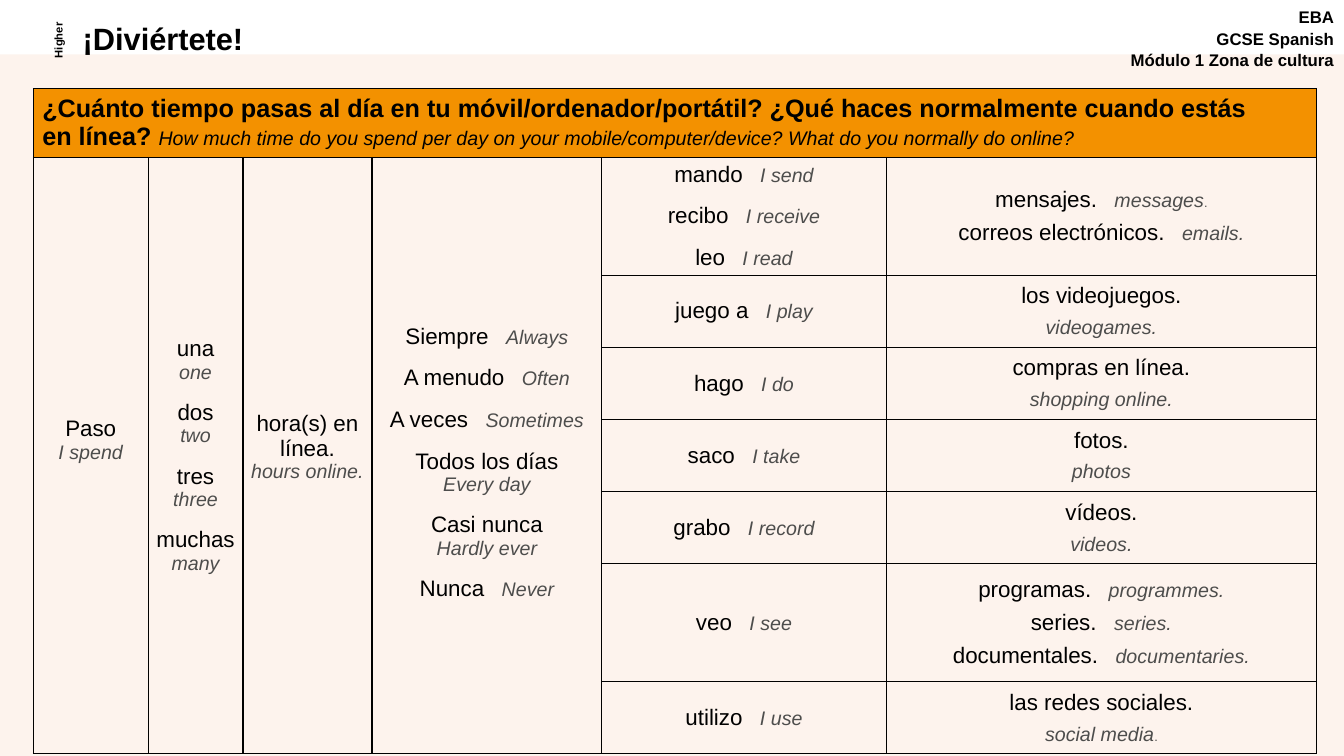
from dataclasses import dataclass

from lxml import etree
from pptx import Presentation
from pptx.dml.color import RGBColor
from pptx.enum import shapes, text
from pptx.oxml.ns import qn
from pptx.util import Inches, Pt


@dataclass(frozen=True)
class Theme:
    font: str = "Arial"
    ink: str = "000000"
    grey: str = "4D4D4C"
    cream: str = "FDF3ED"
    orange: str = "F39100"
    title: int = 22
    question: int = 18
    spanish: int = 16
    english: int = 14
    course: int = 12
    stop: int = 9
    tier: int = 8


@dataclass(frozen=True)
class Phrase:
    """Spanish words with their English meaning beside or below them."""
    spanish: str
    english: str
    stacked: bool = False
    small_stop: bool = False


theme = Theme()


def add_span(para, words, size, color=theme.ink, bold=False, italic=False, tracking=0):
    span = para.add_run()
    span.text = words
    span.font.name = theme.font
    span.font.size = Pt(size)
    span.font.bold = bold
    span.font.italic = italic
    span.font.color.rgb = RGBColor.from_string(color)
    if tracking:
        span._r.get_or_add_rPr().set("spc", str(tracking * 100))


def fill_cell(cell, phrases, after, inner):
    """Write phrases with points after each one and inside each stacked one."""
    paras = []

    def_para = cell.text_frame.paragraphs[0]
    for phrase in phrases:
        para = cell.text_frame.add_paragraph() if paras else def_para
        paras.append(para)
        add_span(para, phrase.spanish, theme.spanish)
        if phrase.stacked:
            para.space_after = Pt(inner)
            para = cell.text_frame.add_paragraph()
            paras.append(para)
        else:
            add_span(para, " ", theme.spanish, tracking=8)
        add_span(para, phrase.english, theme.english, theme.grey, italic=True)
        if phrase.small_stop:
            add_span(para, ".", theme.stop, theme.grey)
        para.space_after = Pt(after)
    for para in paras:
        para.alignment = text.PP_ALIGN.CENTER
    paras[-1].space_after = Pt(0)


deck = Presentation()
deck.slide_width, deck.slide_height = Inches(13.33), Inches(7.5)
page = deck.slides.add_slide(deck.slide_layouts[5])

# Background panel, behind the title
panel = page.shapes.add_shape(shapes.MSO_SHAPE.RECTANGLE, 0, Inches(0.54), Inches(13.33), Inches(6.96))
panel.shadow.inherit = False
panel.fill.solid()
panel.fill.fore_color.rgb = RGBColor.from_string(theme.cream)
panel.line.fill.background()
page.shapes._spTree.insert(2, panel._element)

# Heading
title = page.shapes.title
title.left, title.top, title.width, title.height = (Inches(n) for n in (0.72, 0.19, 6.88, 0.43))
title.text_frame.vertical_anchor = text.MSO_ANCHOR.MIDDLE
para = title.text_frame.paragraphs[0]
para.alignment = text.PP_ALIGN.LEFT
para.line_spacing = 0.9
add_span(para, "¡Diviértete!", theme.title, bold=True)

course_box = page.shapes.add_textbox(Inches(10.44), Inches(0.02), Inches(2.89), Inches(0.77))
course_box.text_frame.word_wrap = True
for index, words in enumerate(("EBA", "GCSE Spanish", "Módulo 1 Zona de cultura")):
    para = course_box.text_frame.add_paragraph() if index else course_box.text_frame.paragraphs[0]
    para.alignment = text.PP_ALIGN.RIGHT
    para.space_before = Pt(1 if index else 0)
    add_span(para, words, theme.course, bold=True)

tier_box = page.shapes.add_textbox(Inches(0.18), Inches(0.29), Inches(0.78), Inches(0.22))
tier_box.rotation = 270
tier_box.text_frame.word_wrap = True
para = tier_box.text_frame.paragraphs[0]
para.alignment = text.PP_ALIGN.CENTER
add_span(para, "Higher", theme.tier, bold=True)

# Sentence-builder table
widths = (1.14, 0.94, 1.28, 2.28, 2.82, 4.27)
header, tall, table_height = 0.68, 1.17, 6.6
short = (table_height - header - 2 * tall) / 5
heights = (header, tall, short, short, short, short, tall, short)
table = page.shapes.add_table(len(heights), len(widths), Inches(0.33), Inches(0.88),
                              Inches(sum(widths)), Inches(table_height)).table
table.first_row = table.horz_banding = False
for column, width in zip(table.columns, widths):
    column.width = Inches(width)
for row, height in zip(table.rows, heights):
    row.height = Inches(height)

last_row = len(heights) - 1
for r in range(len(heights)):
    for c in range(len(widths)):
        cell = table.cell(r, c)
        cell.vertical_anchor = text.MSO_ANCHOR.MIDDLE
        cell.margin_left = cell.margin_right = Inches(0.06 if r else 0.09)
        cell.margin_top = cell.margin_bottom = Inches(0 if r else 0.04)
        heavy_sides = {
            "lnL": r > 0 and 2 <= c <= 4,
            "lnR": r > 0 and 1 <= c <= 3,
            "lnT": r > 1 and c >= 4,
            "lnB": 0 < r < last_row and c >= 4,
        }
        for side, heavy in heavy_sides.items():
            border = etree.SubElement(cell._tc.get_or_add_tcPr(), qn(f"a:{side}"),
                                      w=str(Pt(1 if heavy else 0.75)))
            fill = etree.SubElement(border, qn("a:solidFill"))
            etree.SubElement(fill, qn("a:srgbClr"), val=theme.ink)
        if r:
            cell.fill.background()
        else:
            cell.fill.solid()
            cell.fill.fore_color.rgb = RGBColor.from_string(theme.orange)

question = table.cell(0, 0)
question.merge(table.cell(0, len(widths) - 1))
para = question.text_frame.paragraphs[0]
add_span(para, "¿Cuánto tiempo pasas al día en tu móvil/ordenador/portátil? ¿Qué haces normalmente cuando estás",
         theme.question, bold=True)
para.add_line_break()
add_span(para, "en línea? ", theme.question, bold=True)
add_span(para, "How much time do you spend per day on your mobile/computer/device? What do you normally do online?",
         theme.english, italic=True)

# Tall columns: phrases, top margin, bottom margin
openers = (
    ([Phrase("Paso", "I spend", True)], 0, 0.31),
    ([Phrase("una", "one", True), Phrase("dos", "two", True),
      Phrase("tres", "three", True), Phrase("muchas", "many", True)], 0, 0),
    ([Phrase("hora(s) en línea.", "hours online.", True)], 0, 0.17),
    ([Phrase("Siempre", "Always"), Phrase("A menudo", "Often"), Phrase("A veces", "Sometimes"),
      Phrase("Todos los días", "Every day", True), Phrase("Casi nunca", "Hardly ever", True),
      Phrase("Nunca", "Never")], 0.14, 0),
)
for c, (phrases, top, bottom) in enumerate(openers):
    cell = table.cell(1, c)
    cell.merge(table.cell(last_row, c))
    cell.margin_top, cell.margin_bottom = Inches(top), Inches(bottom)
    fill_cell(cell, phrases, after=12, inner=0)

# Verbs and what follows them
activities = (
    ([Phrase("mando", "I send"), Phrase("recibo", "I receive"), Phrase("leo", "I read")],
     [Phrase("mensajes.", "messages", small_stop=True), Phrase("correos electrónicos.", "emails.")]),
    ([Phrase("juego a", "I play")], [Phrase("los videojuegos.", "videogames.", True)]),
    ([Phrase("hago", "I do")], [Phrase("compras en línea.", "shopping online.", True)]),
    ([Phrase("saco", "I take")], [Phrase("fotos.", "photos", True)]),
    ([Phrase("grabo", "I record")], [Phrase("vídeos.", "videos.", True)]),
    ([Phrase("veo", "I see")],
     [Phrase("programas.", "programmes."), Phrase("series.", "series."),
      Phrase("documentales.", "documentaries.")]),
    ([Phrase("utilizo", "I use")], [Phrase("las redes sociales.", "social media", True, True)]),
)
for r, (verbs, objects) in enumerate(activities, start=1):
    fill_cell(table.cell(r, 4), verbs, after=12, inner=0)
    fill_cell(table.cell(r, 5), objects, after=6, inner=6)

deck.save("out.pptx")
